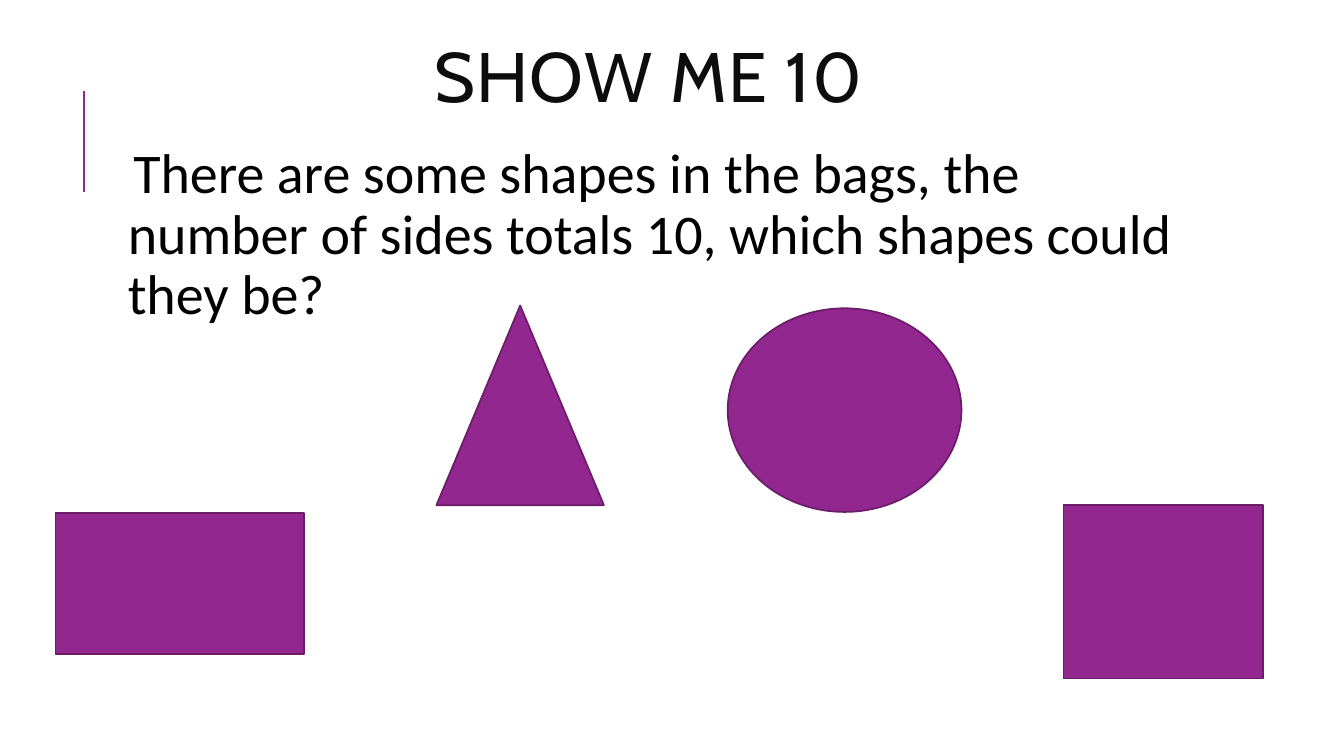
from typing import NamedTuple

import lxml.etree
import pptx
import pptx.dml.color
import pptx.enum.shapes
import pptx.enum.text
import pptx.oxml.ns
import pptx.util

COLOURS = {
    "purple": "92278F",
    "outline": "6C1D6A",
    "title": "0D0D0D",
    "body": "000000",
}
SHAPES = pptx.enum.shapes.MSO_SHAPE


class Box(NamedTuple):
    left: float
    top: float
    width: float
    height: float


class Polygon(NamedTuple):
    kind: SHAPES
    box: Box


class TextStyle(NamedTuple):
    font: str
    size: float
    colour: str
    line_spacing: float
    alignment: pptx.enum.text.PP_ALIGN
    anchor: pptx.enum.text.MSO_ANCHOR


TITLE_STYLE = TextStyle("Cabin", 50, "title", 0.8, pptx.enum.text.PP_ALIGN.CENTER,
                        pptx.enum.text.MSO_ANCHOR.MIDDLE)
BODY_STYLE = TextStyle("Calibri", 40, "body", 0.9, pptx.enum.text.PP_ALIGN.LEFT,
                       pptx.enum.text.MSO_ANCHOR.TOP)
POLYGONS = [
    Polygon(SHAPES.RECTANGLE, Box(1.4, 12.93, 6.27, 3.56)),
    Polygon(SHAPES.ISOSCELES_TRIANGLE, Box(11, 7.7, 4.22, 5.03)),
    Polygon(SHAPES.OVAL, Box(18.34, 7.77, 5.89, 5.13)),
    Polygon(SHAPES.RECTANGLE, Box(26.8, 12.73, 5.03, 4.37)),
]


def colour(name: str) -> pptx.dml.color.RGBColor:
    return pptx.dml.color.RGBColor.from_string(COLOURS[name])


def lengths(box: Box) -> list[pptx.util.Length]:
    return [pptx.util.Cm(value) for value in box]


def add_bullet(paragraph, character: str, colour_name: str) -> None:
    properties = paragraph._p.get_or_add_pPr()
    properties.set("marL", str(pptx.util.Cm(0.25)))
    properties.set("indent", str(-pptx.util.Cm(0.25)))
    bullet_colour = lxml.etree.SubElement(properties, pptx.oxml.ns.qn("a:buClr"))
    lxml.etree.SubElement(bullet_colour, pptx.oxml.ns.qn("a:srgbClr"), val=COLOURS[colour_name])
    lxml.etree.SubElement(properties, pptx.oxml.ns.qn("a:buChar"), char=character)


def fill_placeholder(placeholder, box: Box, text: str, style: TextStyle):
    placeholder.left, placeholder.top, placeholder.width, placeholder.height = lengths(box)
    text_frame = placeholder.text_frame
    text_frame.text = text
    text_frame.word_wrap = True
    text_frame.auto_size = pptx.enum.text.MSO_AUTO_SIZE.NONE
    text_frame.vertical_anchor = style.anchor
    paragraph = text_frame.paragraphs[0]
    paragraph.alignment = style.alignment
    paragraph.line_spacing = style.line_spacing
    paragraph.space_before = pptx.util.Pt(0)
    font = paragraph.runs[0].font
    font.name = style.font
    font.size = pptx.util.Pt(style.size)
    font.color.rgb = colour(style.colour)
    return text_frame


def add_accent_line(slide) -> None:
    line = slide.shapes.add_connector(
        pptx.enum.shapes.MSO_CONNECTOR.STRAIGHT,
        *lengths(Box(2.11, 4.83, 2.11, 2.29)),
    )
    line.line.color.rgb = colour("purple")
    line.line.width = pptx.util.Pt(1.5)
    lxml.etree.SubElement(line._element.spPr, pptx.oxml.ns.qn("a:effectLst"))


def add_polygon(slide, polygon: Polygon) -> None:
    shape = slide.shapes.add_shape(polygon.kind, *lengths(polygon.box))
    shape.shadow.inherit = False
    shape.fill.solid()
    shape.fill.fore_color.rgb = colour("purple")
    shape.line.color.rgb = colour("outline")
    shape.line.width = pptx.util.Pt(1.25)


def main() -> None:
    presentation = pptx.Presentation()
    presentation.slide_width = pptx.util.Cm(33.87)
    presentation.slide_height = pptx.util.Cm(19.05)
    slide = presentation.slides.add_slide(presentation.slide_layouts[1])

    title = fill_placeholder(slide.shapes.title, Box(2.84, 0, 27, 4.17), "SHOW ME 10", TITLE_STYLE)
    title.paragraphs[0].runs[0]._r.get_or_add_rPr().set("spc", "100")

    body = fill_placeholder(
        slide.placeholders[1],
        Box(2.84, 3.53, 27, 14),
        "There are some shapes in the bags, the number of sides totals 10, "
        "which shapes could they be?",
        BODY_STYLE,
    )
    margin = pptx.util.Cm(0.13)
    body.margin_left = body.margin_top = body.margin_right = body.margin_bottom = margin
    add_bullet(body.paragraphs[0], " ", "purple")
    body.paragraphs[0].space_after = pptx.util.Pt(2)

    add_accent_line(slide)
    for polygon in POLYGONS:
        add_polygon(slide, polygon)

    presentation.save("out.pptx")


if __name__ == "__main__":
    main()
